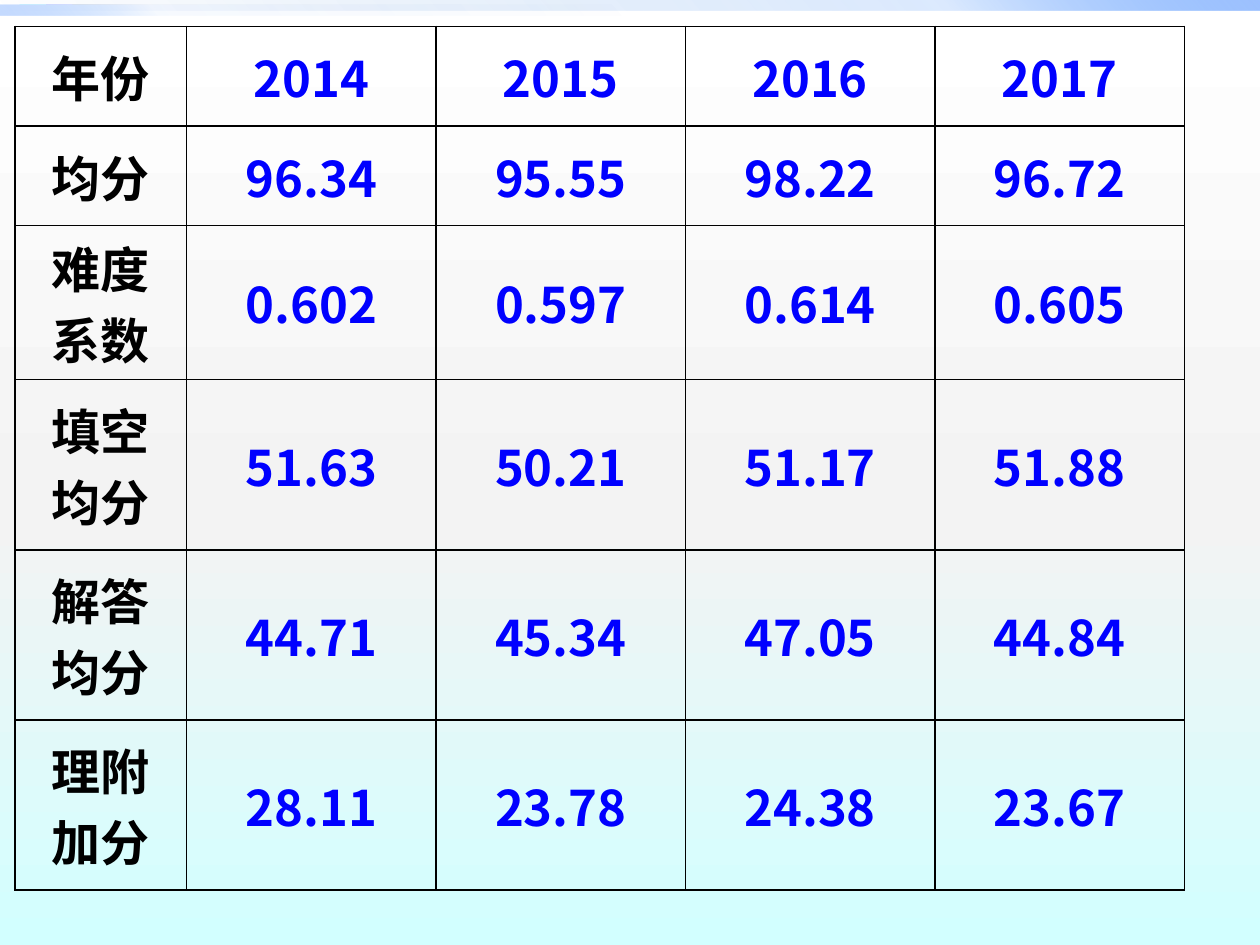
from dataclasses import dataclass

from lxml.etree import SubElement as Sub
from pptx import Presentation
from pptx.dml.color import RGBColor as RGB
from pptx.enum.shapes import MSO_SHAPE as Shape
from pptx.enum.text import MSO_ANCHOR as Anchor, PP_ALIGN as Align
from pptx.oxml.ns import qn
from pptx.util import Inches, Pt


@dataclass(frozen=True)
class Theme:
    font: str = "Noto Sans CJK SC"
    size: int = 28
    label: str = "000000"
    value: str = "0000FF"
    border: str = "000000"
    border_width: int = 1
    # Gradient stops: position, colour, opacity (all but the colour in percent)
    background: tuple = ((0, "FFFFFF", 100), (55, "F3F3F3", 100), (100, "D2FFFF", 100))
    top_band: tuple = ((0, "0058B7", 0), (75, "4F95FF", 20), (100, "9EC2FF", 100))
    left_band: tuple = ((0, "0058B7", 0), (75, "4F95FF", 5), (100, "9EC2FF", 60))


THEME = Theme()

ROWS = [
    ("年份", "2014", "2015", "2016", "2017"),
    ("均分", "96.34", "95.55", "98.22", "96.72"),
    ("难度\n系数", "0.602", "0.597", "0.614", "0.605"),
    ("填空\n均分", "51.63", "50.21", "51.17", "51.88"),
    ("解答\n均分", "44.71", "45.34", "47.05", "44.84"),
    ("理附\n加分", "28.11", "23.78", "24.38", "23.67"),
]
COL_WIDTHS = [1.36] + [1.98] * 4
ROW_HEIGHTS = [0.79] * 2 + [1.22] + [1.35] * 3


def set_gradient(fill, parent, stops, angle):
    """Give fill, held in the XML element parent, these stops; angle is clockwise."""
    fill.gradient()
    grad = parent.find(".//" + qn("a:gradFill"))
    grad.find(qn("a:lin")).set("ang", str(angle * 60000))
    gs_list = grad.find(qn("a:gsLst"))
    for gs in list(gs_list):
        gs_list.remove(gs)
    for position, color, opacity in stops:
        gs = Sub(gs_list, qn("a:gs"), pos=str(position * 1000))
        clr = Sub(gs, qn("a:srgbClr"), val=color)
        if opacity < 100:
            Sub(clr, qn("a:alpha"), val=str(opacity * 1000))


def add_band(s, top, width, stops, angle):
    sp = s.shapes.add_shape(Shape.RECTANGLE, 0, Inches(top), Inches(width), Inches(0.08))
    sp.shadow.inherit = False
    sp.line.fill.background()
    set_gradient(sp.fill, sp.element.spPr, stops, angle)


def set_borders(cell):
    tc_pr = cell._tc.get_or_add_tcPr()
    for i, side in enumerate(("lnL", "lnR", "lnT", "lnB")):
        ln = tc_pr.makeelement(qn(f"a:{side}"), {"w": str(Pt(THEME.border_width))})
        Sub(Sub(ln, qn("a:solidFill")), qn("a:srgbClr"), val=THEME.border)
        tc_pr.insert(i, ln)


def fill_cell(cell, text, color):
    cell.text = text
    cell.vertical_anchor = Anchor.MIDDLE
    cell.fill.background()
    set_borders(cell)
    for p in cell.text_frame.paragraphs:
        p.alignment = Align.CENTER
        for r in p.runs:
            r.font.name = THEME.font
            r.font.size = Pt(THEME.size)
            r.font.bold = True
            r.font.color.rgb = RGB.from_string(color)
            Sub(r.font._element, qn("a:ea"), typeface=THEME.font)


def add_score_table(s):
    frame = s.shapes.add_table(
        len(ROWS), len(COL_WIDTHS), Inches(0.12), Inches(0.21),
        Inches(sum(COL_WIDTHS)), Inches(sum(ROW_HEIGHTS)))
    table = frame.table
    table.first_row = table.horz_banding = False
    for column, width in zip(table.columns, COL_WIDTHS):
        column.width = Inches(width)
    for i, (height, texts) in enumerate(zip(ROW_HEIGHTS, ROWS)):
        table.rows[i].height = Inches(height)
        for j, text in enumerate(texts):
            fill_cell(table.cell(i, j), text, THEME.value if j else THEME.label)


def main():
    prs = Presentation()
    prs.slide_width, prs.slide_height = Inches(10), Inches(7.5)
    s = prs.slides.add_slide(prs.slide_layouts[6])
    set_gradient(s.background.fill, s.element, THEME.background, 90)
    add_band(s, 0, 10, THEME.top_band, 315)
    add_band(s, 0.04, 5, THEME.left_band, 135)
    add_score_table(s)
    prs.save("out.pptx")


if __name__ == "__main__":
    main()
